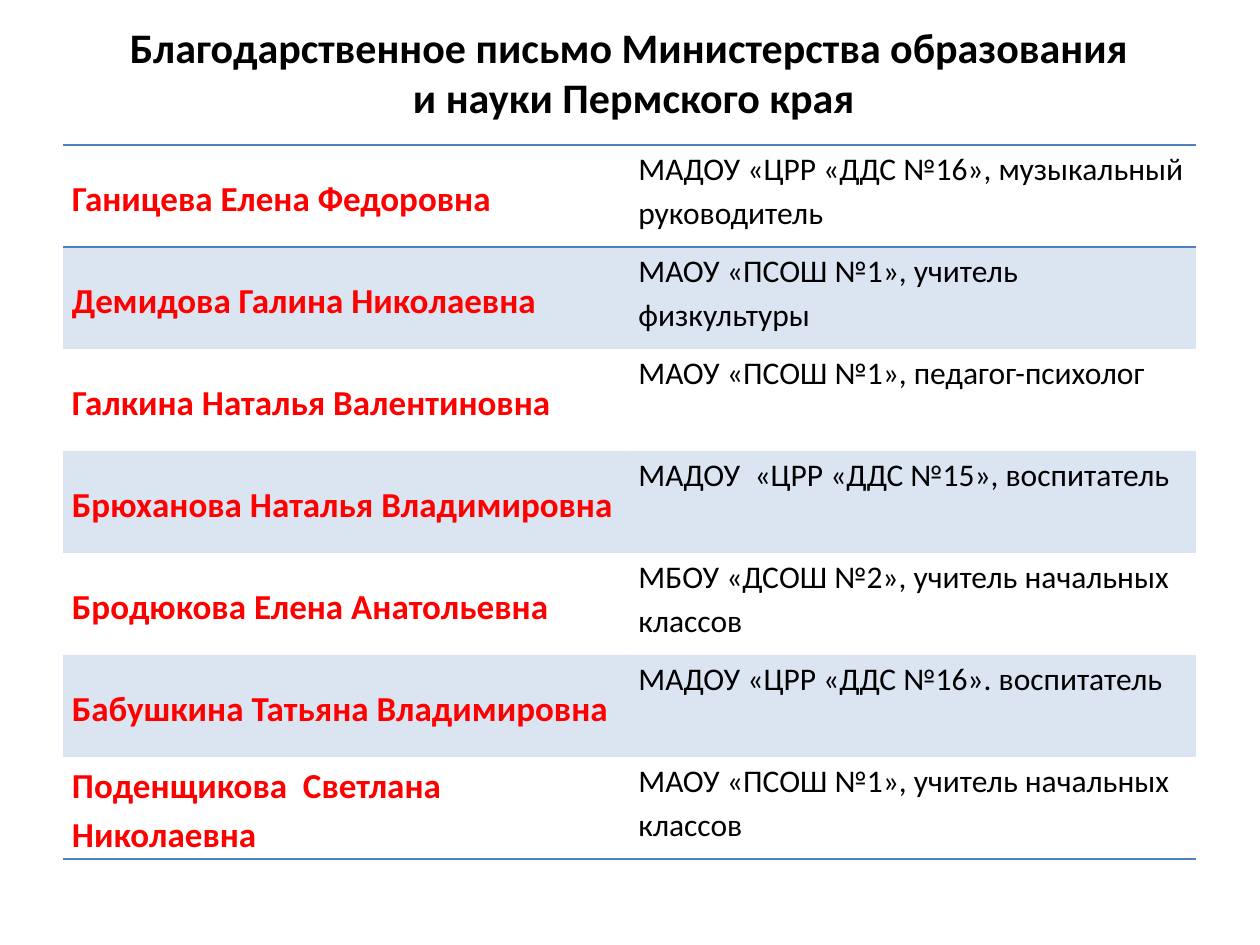
from lxml import etree
from pptx import Presentation
from pptx.dml.color import RGBColor
from pptx.enum.text import MSO_ANCHOR, PP_ALIGN
from pptx.oxml.ns import qn
from pptx.util import Pt

MIDDLE, TOP = MSO_ANCHOR.MIDDLE, MSO_ANCHOR.TOP
CENTER = PP_ALIGN.CENTER
BLACK = RGBColor(0x00, 0x00, 0x00)
RED = RGBColor(0xFF, 0x00, 0x00)
BLUE = RGBColor(0x4F, 0x81, 0xBD)
FONT = "Calibri"
PLAIN_STYLE = "{2D5ABB26-0587-4C30-8999-92F81FD0307C}"
PX_PER_INCH = 126

HEADING = "Благодарственное письмо Министерства образования\v и науки Пермского края"
AWARDS = [
    ("Ганицева Елена Федоровна", "МАДОУ «ЦРР «ДДС №16», музыкальный руководитель"),
    ("Демидова Галина Николаевна", "МАОУ «ПСОШ №1», учитель физкультуры"),
    ("Галкина Наталья Валентиновна", "МАОУ «ПСОШ №1», педагог-психолог"),
    ("Брюханова Наталья Владимировна", "МАДОУ  «ЦРР «ДДС №15», воспитатель"),
    ("Бродюкова Елена Анатольевна", "МБОУ «ДСОШ №2», учитель начальных классов"),
    ("Бабушкина Татьяна Владимировна", "МАДОУ «ЦРР «ДДС №16». воспитатель"),
    ("Поденщикова  Светлана Николаевна", "МАОУ «ПСОШ №1», учитель начальных классов"),
]


def px(length):
    return round(length * 914400 / PX_PER_INCH)


def set_font(paragraph, size, color, bold):
    font = paragraph.font
    font.name, font.size, font.bold = FONT, Pt(size), bold
    font.color.rgb = color


def add_heading(slide, left, top, width, height):
    heading = slide.shapes.title
    heading.left, heading.top = px(left), px(top)
    heading.width, heading.height = px(width), px(height)
    frame = heading.text_frame
    frame.text = HEADING
    frame.vertical_anchor = MIDDLE
    paragraph = frame.paragraphs[0]
    paragraph.alignment = CENTER
    set_font(paragraph, 24, BLACK, True)


def add_border(cell, side):
    line = etree.SubElement(cell._tc.get_or_add_tcPr(), qn(f"a:{side}"), w=str(Pt(1)))
    fill = etree.SubElement(line, qn("a:solidFill"))
    etree.SubElement(fill, qn("a:srgbClr"), val=str(BLUE))


def tint(cell, percent):
    cell.fill.solid()
    cell.fill.fore_color.rgb = BLUE
    color = cell._tc.tcPr.find(".//" + qn("a:solidFill") + "/" + qn("a:srgbClr"))
    etree.SubElement(color, qn("a:alpha"), val=str(percent * 1000))


def write_cell(cell, text, size, color, bold, anchor, space_after):
    cell.margin_left = cell.margin_right = px(9)
    cell.margin_top = cell.margin_bottom = 0
    cell.vertical_anchor = anchor
    cell.text = text
    paragraph = cell.text_frame.paragraphs[0]
    paragraph.line_spacing = 1.15
    paragraph.space_after = Pt(space_after)
    set_font(paragraph, size, color, bold)


def add_awards(slide, left, top, width, height):
    table = slide.shapes.add_table(
        len(AWARDS), 2, px(left), px(top), px(width), px(height)).table
    table._tbl.tblPr.find(qn("a:tableStyleId")).text = PLAIN_STYLE
    table.first_row = table.horz_banding = False
    last = len(AWARDS) - 1
    for index, (person, position) in enumerate(AWARDS):
        name_cell, position_cell = table.cell(index, 0), table.cell(index, 1)
        write_cell(name_cell, person, 20, RED, True, MIDDLE, 0)
        write_cell(position_cell, position, 18, BLACK, False, TOP, 10)
        for cell in (name_cell, position_cell):
            if index == 0:
                add_border(cell, "lnT")
            if index in (0, last):
                add_border(cell, "lnB")
            if index % 2:
                tint(cell, 20)
            else:
                cell.fill.background()


def main():
    deck = Presentation()
    deck.slide_width, deck.slide_height = px(1260), px(945)
    slide = deck.slides.add_slide(deck.slide_layouts[5])
    add_heading(slide, 25, 37, 1208, 69)
    add_awards(slide, 63, 145, 1133, 714)
    deck.save("out.pptx")


if __name__ == "__main__":
    main()
